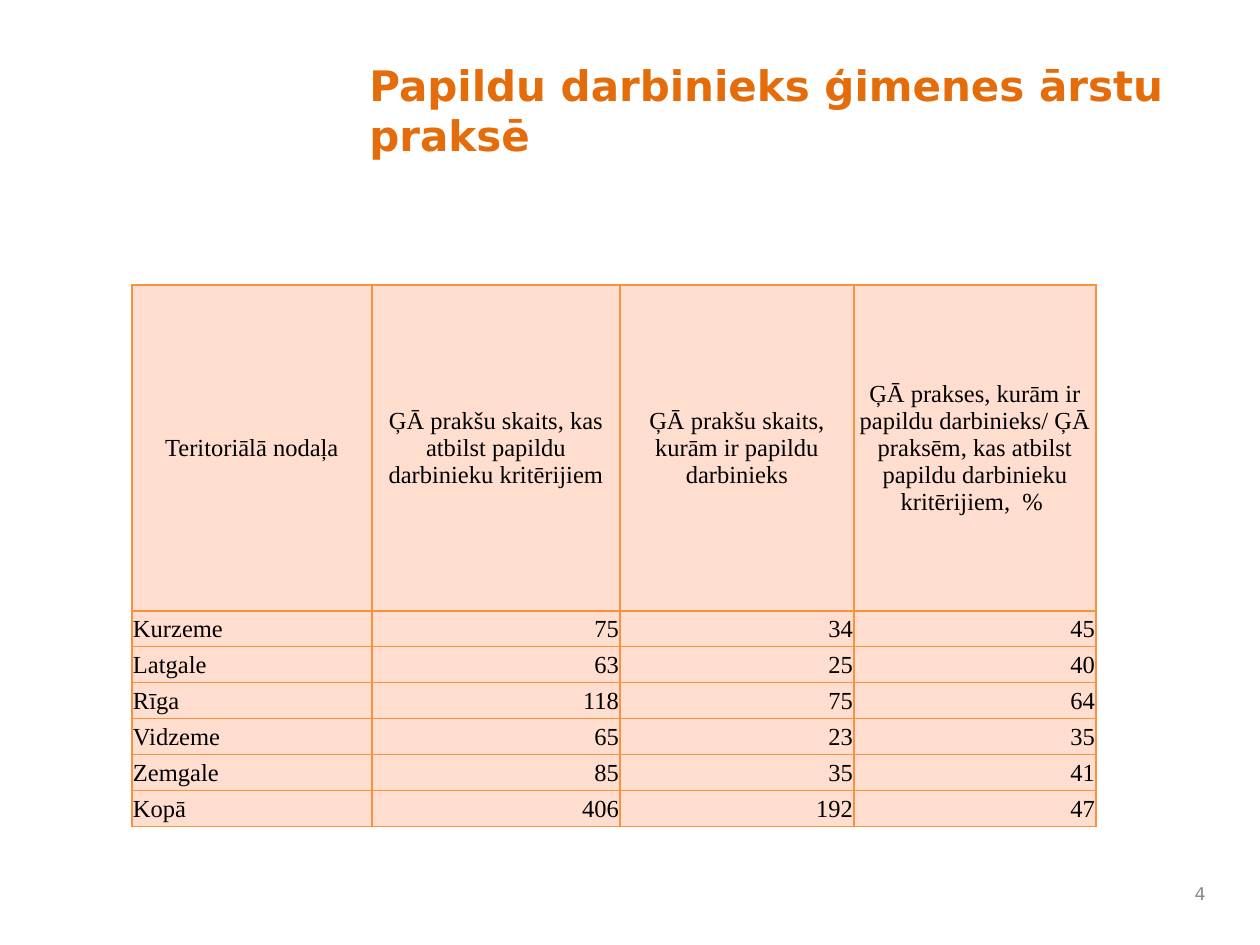
from dataclasses import dataclass

from lxml import etree
from pptx import Presentation
from pptx.dml.color import RGBColor
from pptx.enum.text import MSO_ANCHOR, PP_ALIGN
from pptx.oxml.ns import qn
from pptx.slide import Slide
from pptx.table import _Cell
from pptx.text.text import TextFrame
from pptx.util import Emu, Pt

LEFT, CENTER, RIGHT = PP_ALIGN.LEFT, PP_ALIGN.CENTER, PP_ALIGN.RIGHT
TOP, MIDDLE = MSO_ANCHOR.TOP, MSO_ANCHOR.MIDDLE

EMU_PER_INCH = 914400
PX_PER_INCH = 126
SLIDE_WIDTH, SLIDE_HEIGHT = 1260, 945

COLORS = {
    "title": "E46C0A",
    "number": "898989",
    "text": "000000",
    "cell": "FFDED0",
    "border": "F69240",
}


@dataclass(frozen=True)
class TextStyle:
    font: str
    size: int
    color: str
    bold: bool = False


@dataclass(frozen=True)
class Label:
    text: str
    left: int
    top: int
    width: int
    height: int
    style: TextStyle
    alignment: PP_ALIGN
    anchor: MSO_ANCHOR


CELL_STYLE = TextStyle("Times New Roman", 14, "text")

LABELS = [
    Label("Papildu darbinieks ģimenes ārstu praksē", 357, 53, 840, 142,
          TextStyle("DejaVu Sans", 24, "title", True), LEFT, TOP),
    Label("4", 1176, 872, 42, 42,
          TextStyle("DejaVu Sans", 10, "number"), RIGHT, MIDDLE),
]

TABLE_LEFT, TABLE_TOP = 132, 285
COLUMN_WIDTHS = [240, 248, 234, 242]
HEADER_HEIGHT, ROW_HEIGHT = 326, 36
TABLE_ROWS = [
    ("Teritoriālā nodaļa",
     "ĢĀ prakšu skaits, kas atbilst papildu darbinieku kritērijiem",
     "ĢĀ prakšu skaits, kurām ir papildu darbinieks",
     "ĢĀ prakses, kurām ir papildu darbinieks/ ĢĀ praksēm, "
     "kas atbilst papildu darbinieku kritērijiem,  % "),
    ("Kurzeme", "75", "34", "45"),
    ("Latgale", "63", "25", "40"),
    ("Rīga", "118", "75", "64"),
    ("Vidzeme", "65", "23", "35"),
    ("Zemgale", "85", "35", "41"),
    ("Kopā", "406", "192", "47"),
]


def px(length: int) -> Emu:
    return Emu(round(length * EMU_PER_INCH / PX_PER_INCH))


def write_text(text_frame: TextFrame, text: str, style: TextStyle,
               alignment: PP_ALIGN) -> None:
    text_frame.text = text
    paragraph = text_frame.paragraphs[0]
    paragraph.alignment = alignment
    for run in paragraph.runs:
        run.font.name = style.font
        run.font.size = Pt(style.size)
        run.font.bold = style.bold
        run.font.color.rgb = RGBColor.from_string(COLORS[style.color])


def add_label(slide: Slide, label: Label) -> None:
    shape = slide.shapes.add_textbox(
        px(label.left), px(label.top), px(label.width), px(label.height))
    shape.text_frame.word_wrap = True
    shape.text_frame.vertical_anchor = label.anchor
    write_text(shape.text_frame, label.text, label.style, label.alignment)


def add_borders(cell: _Cell) -> None:
    properties = cell._tc.get_or_add_tcPr()
    for position, side in enumerate(("lnL", "lnR", "lnT", "lnB")):
        line = etree.Element(qn(f"a:{side}"), w=str(Pt(0.75)))
        fill = etree.SubElement(line, qn("a:solidFill"))
        etree.SubElement(fill, qn("a:srgbClr"), val=COLORS["border"])
        properties.insert(position, line)


def format_cell(cell: _Cell, text: str, alignment: PP_ALIGN) -> None:
    cell.margin_left = cell.margin_right = cell.margin_top = px(1)
    cell.margin_bottom = 0
    cell.vertical_anchor = MIDDLE
    cell.fill.solid()
    cell.fill.fore_color.rgb = RGBColor.from_string(COLORS["cell"])
    write_text(cell.text_frame, text, CELL_STYLE, alignment)
    add_borders(cell)


def add_practice_table(slide: Slide) -> None:
    heights = [HEADER_HEIGHT] + [ROW_HEIGHT] * (len(TABLE_ROWS) - 1)
    table = slide.shapes.add_table(
        len(TABLE_ROWS), len(COLUMN_WIDTHS), px(TABLE_LEFT), px(TABLE_TOP),
        px(sum(COLUMN_WIDTHS)), px(sum(heights))).table
    for column, width in zip(table.columns, COLUMN_WIDTHS):
        column.width = px(width)
    for row, height in zip(table.rows, heights):
        row.height = px(height)
    for row_index, values in enumerate(TABLE_ROWS):
        for column_index, value in enumerate(values):
            body_alignment = RIGHT if column_index else LEFT
            alignment = body_alignment if row_index else CENTER
            format_cell(table.cell(row_index, column_index), value, alignment)


def main() -> None:
    presentation = Presentation()
    presentation.slide_width = px(SLIDE_WIDTH)
    presentation.slide_height = px(SLIDE_HEIGHT)
    slide = presentation.slides.add_slide(presentation.slide_layouts[6])
    for label in LABELS:
        add_label(slide, label)
    add_practice_table(slide)
    presentation.save("out.pptx")


if __name__ == "__main__":
    main()
